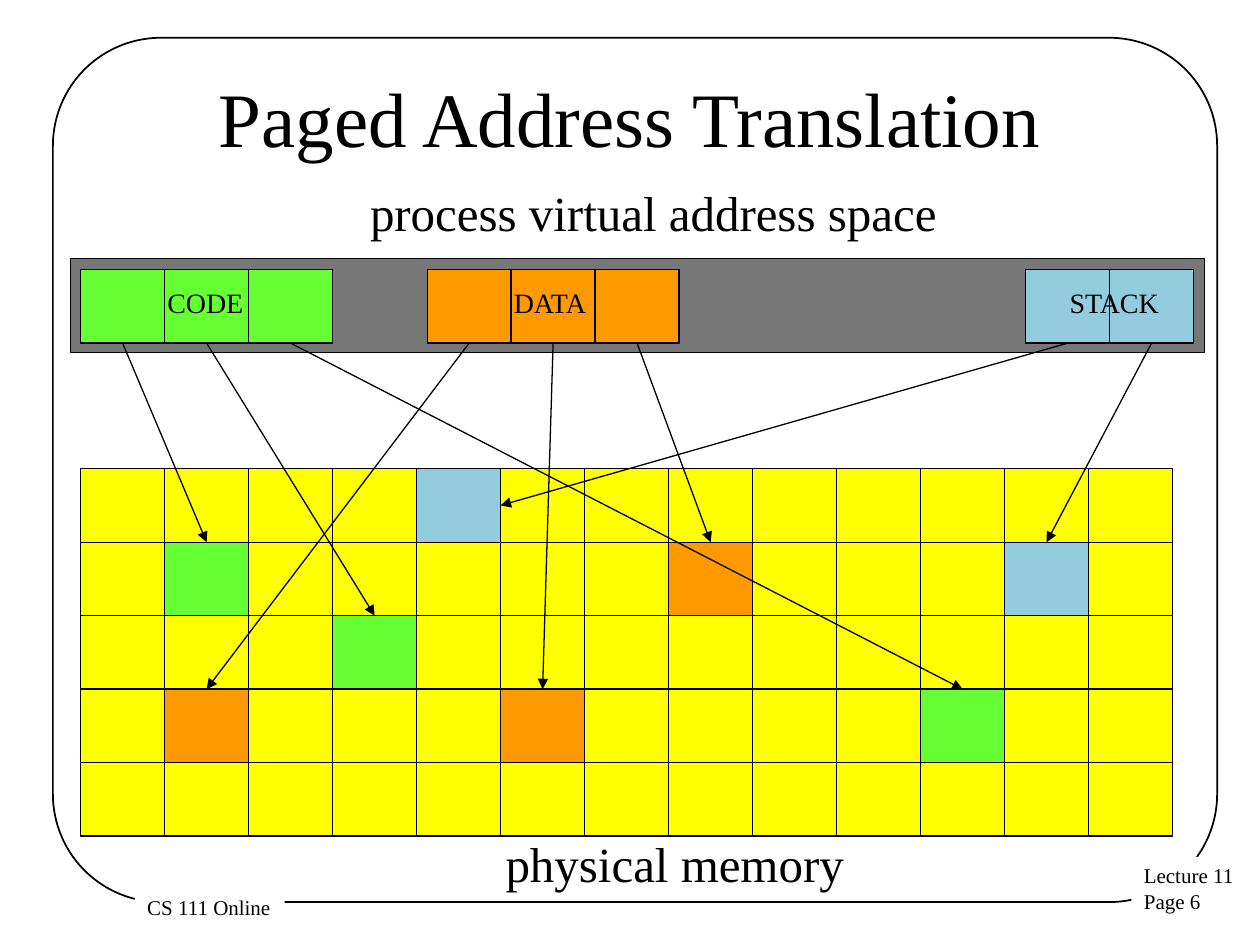
from lxml import etree
from pptx import Presentation
from pptx import util as u
from pptx.dml.color import RGBColor
from pptx.enum import shapes, text
from pptx.oxml import ns

BLACK = RGBColor(0x00, 0x00, 0x00)
WHITE = RGBColor(0xFF, 0xFF, 0xFF)
GREY = RGBColor(0x77, 0x77, 0x77)
GREEN = RGBColor(0x66, 0xFF, 0x33)
ORANGE = RGBColor(0xFF, 0x99, 0x00)
BLUE = RGBColor(0x93, 0xCD, 0xDD)
YELLOW = RGBColor(0xFF, 0xFF, 0x00)

BOX = shapes.MSO_SHAPE.RECTANGLE
ROUND = shapes.MSO_SHAPE.ROUNDED_RECTANGLE
CENTER = text.PP_ALIGN.CENTER
LEFT = text.PP_ALIGN.LEFT

# Page size and grid of frames, in inches
WIDE, HIGH = 2 / 3, 7 / 12
GRID_X, GRID_Y = 0.64, 3.72
ROWS, COLS = 5, 13
SEG_Y = 2.14
TOP, BOTTOM, RIGHT = 0, 2, 3

# Segment: name, colour, left, label left, label width,
# and for each page: frame row, frame column, side the arrow meets
SEGS = [
    ("CODE", GREEN, 0.64, 1.23, 1.58,
     [(1, 1, TOP), (2, 3, TOP), (3, 10, TOP)]),
    ("DATA", ORANGE, 3.39, 3.98, 1.33,
     [(3, 1, TOP), (3, 5, TOP), (1, 7, TOP)]),
    ("STACK", BLUE, 8.14, 8.39, 1.17,
     [(0, 4, RIGHT), (1, 11, TOP)]),
]


class Pen:
    """Holds the style and the current slide."""
    font = "Times New Roman"
    thin = u.Pt(0.75)

    def __init__(self, slide):
        self.slide = slide
        self.items = slide.shapes

    def box(self, x, y, w, h, fill=None, line=thin, kind=BOX):
        item = self.items.add_shape(
            kind, u.Inches(x), u.Inches(y), u.Inches(w), u.Inches(h))
        item.shadow.inherit = False
        if fill is None:
            item.fill.background()
        else:
            item.fill.solid()
            item.fill.fore_color.rgb = fill
        item.line.color.rgb = BLACK
        item.line.width = line
        return item

    def words(self, frame, lines, size, align):
        for i, line in enumerate(lines):
            para = frame.paragraphs[0] if i == 0 else frame.add_paragraph()
            para.alignment = align
            run = para.add_run()
            run.text = line
            run.font.name = self.font
            run.font.size = u.Pt(size)
            run.font.color.rgb = BLACK

    def title(self, line, x, y, w, h):
        item = self.items.title
        item.left, item.top = u.Inches(x), u.Inches(y)
        item.width, item.height = u.Inches(w), u.Inches(h)
        item.text_frame.vertical_anchor = text.MSO_ANCHOR.MIDDLE
        self.words(item.text_frame, [line], 44, CENTER)

    def label(self, lines, x, y, w, h, size, align=LEFT, fill=None, wrap=True):
        item = self.items.add_textbox(
            u.Inches(x), u.Inches(y), u.Inches(w), u.Inches(h))
        if fill is not None:
            item.fill.solid()
            item.fill.fore_color.rgb = fill
        item.text_frame.word_wrap = wrap
        self.words(item.text_frame, lines, size, align)

    def arrow(self, page, frame, side):
        item = self.items.add_connector(
            shapes.MSO_CONNECTOR.STRAIGHT, 0, 0, 0, 0)
        item.begin_connect(page, BOTTOM)
        item.end_connect(frame, side)
        item.line.color.rgb = BLACK
        item.line.width = self.thin
        props = item.element.spPr
        tail = etree.SubElement(props.get_or_add_ln(), ns.qn("a:tailEnd"))
        tail.set("type", "triangle")
        etree.SubElement(props, ns.qn("a:effectLst"))


def main():
    deck = Presentation()
    deck.slide_width, deck.slide_height = u.Inches(10), u.Inches(7.5)
    pen = Pen(deck.slides.add_slide(deck.slide_layouts[5]))

    # Border, footers and title
    border = pen.box(0.42, 0.3, 9.24, 6.86, line=u.Pt(1), kind=ROUND)
    border.adjustments[0] = 0.125
    pen.label(["Lecture 11", "Page 6"], 8.98, 6.8, 0.92, 0.51, 12,
              fill=WHITE, wrap=False)
    pen.label(["CS 111 Online"], 1.07, 7.05, 1.19, 0.3, 12,
              fill=WHITE, wrap=False)
    pen.title("Paged Address Translation", 0.5, 0.3, 9, 1.25)

    # Virtual address space
    pen.box(0.56, 2.05, 9, 0.75, GREY)
    links, used = [], {}
    for name, fill, x, text_x, text_w, goals in SEGS:
        for i, (row, col, side) in enumerate(goals):
            page = pen.box(x + i * WIDE, SEG_Y, WIDE, HIGH, fill)
            links.append((page, (row, col), side))
            used[row, col] = fill
        pen.label([name], text_x, 2.22, text_w, 0.37, 16)

    # Physical memory
    frames = {}
    for row in range(ROWS):
        for col in range(COLS):
            frames[row, col] = pen.box(
                GRID_X + col * WIDE, GRID_Y + row * HIGH, WIDE, HIGH,
                used.get((row, col), YELLOW))

    # Captions
    pen.label(["process virtual address space"],
              2.31, 1.4, 5.75, 0.57, 28, CENTER)
    pen.label(["physical memory"], 2.48, 6.57, 5.75, 0.57, 28, CENTER)

    # Page to frame arrows
    for page, spot, side in links:
        pen.arrow(page, frames[spot], side)

    deck.save("out.pptx")


if __name__ == "__main__":
    main()
